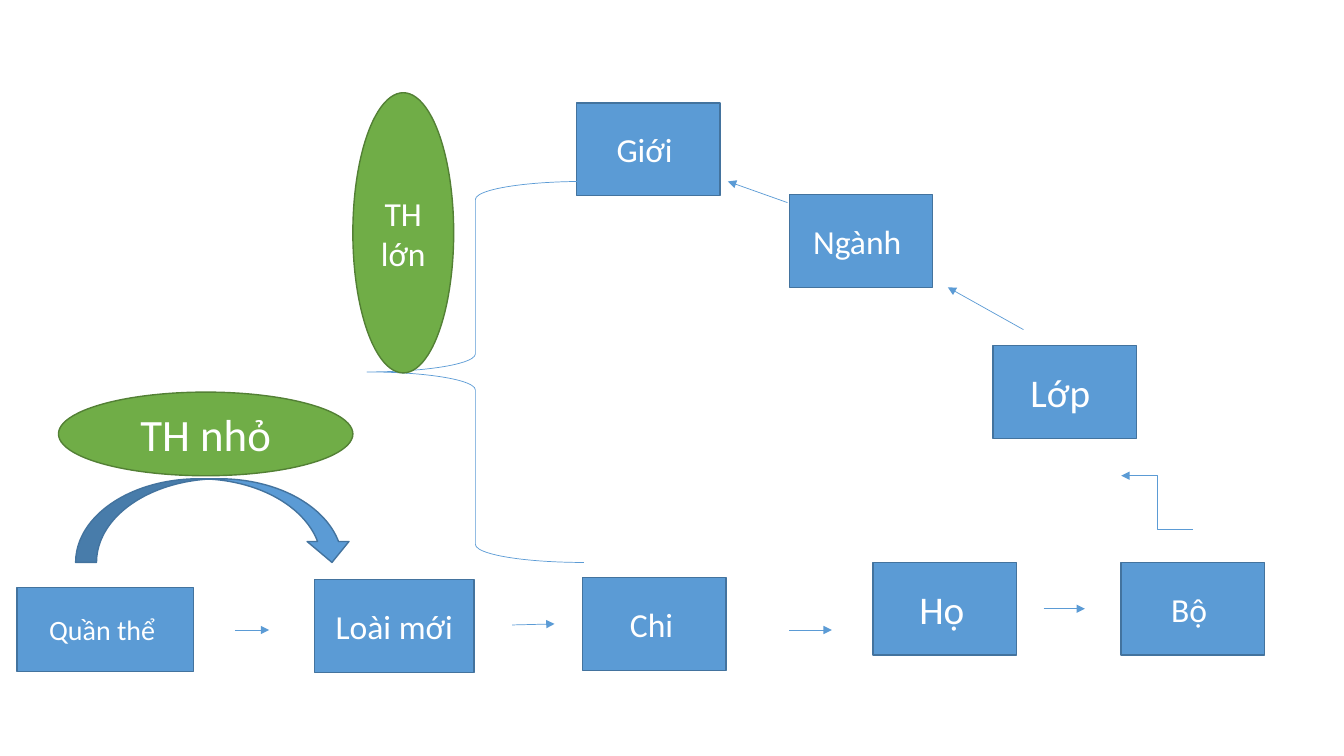
import pptx
import pptx.dml.color
import pptx.enum.shapes
import pptx.enum.text
import pptx.oxml
import pptx.oxml.ns
import pptx.util
from dataclasses import dataclass

Inches = pptx.util.Inches
Pt = pptx.util.Pt
SHAPE = pptx.enum.shapes.MSO_SHAPE
LINK = pptx.enum.shapes.MSO_CONNECTOR


@dataclass
class Theme:
    font: str = "Calibri"
    white: str = "FFFFFF"
    blue: str = "5B9BD5"
    navy: str = "43739E"
    green: str = "70AD47"
    moss: str = "538035"
    tiny: int = 18
    small: int = 20
    base: int = 24
    large: int = 28
    huge: int = 32
    edge: float = 1
    thin: float = 0.5


def color(code):
    return pptx.dml.color.RGBColor.from_string(code)


class Chart:
    def __init__(self, slide, theme):
        self.slide = slide
        self.theme = theme

    def shape(self, kind, at, fill, line, width):
        item = self.slide.shapes.add_shape(kind, *map(Inches, at))
        item.shadow.inherit = False
        if fill:
            item.fill.solid()
            item.fill.fore_color.rgb = color(fill)
        else:
            item.fill.background()
        item.line.color.rgb = color(line)
        item.line.width = Pt(width)
        return item

    def label(self, item, text, size):
        """Centre the text; a space closing a "|" text is set in the tiny size."""
        frame = item.text_frame
        frame.word_wrap = True
        frame.vertical_anchor = pptx.enum.text.MSO_ANCHOR.MIDDLE
        para = frame.paragraphs[0]
        para.alignment = pptx.enum.text.PP_ALIGN.CENTER
        para.font.name = self.theme.font
        para.font.color.rgb = color(self.theme.white)
        para.font.size = Pt(size)
        for part, points in zip(text.split("|"), (size, self.theme.tiny)):
            run = para.add_run()
            run.text = part
            if points != size:
                run.font.size = Pt(points)

    def box(self, text, size, left, top, width=1.42, height=0.92):
        look = self.theme
        item = self.shape(SHAPE.RECTANGLE, (left, top, width, height),
                          look.blue, look.navy, look.edge)
        self.label(item, text, size)

    def oval(self, text, size, *at):
        look = self.theme
        item = self.shape(SHAPE.OVAL, at, look.green, look.moss, look.edge)
        self.label(item, text, size)

    def curve(self, *at):
        look = self.theme
        self.shape(SHAPE.CURVED_DOWN_ARROW, at, look.blue, look.navy, look.edge)

    def brace(self, *at):
        look = self.theme
        self.shape(SHAPE.LEFT_BRACE, at, None, look.blue, look.thin)

    def arrow(self, *ends, kind=LINK.STRAIGHT):
        item = self.slide.shapes.add_connector(kind, *map(Inches, ends))
        item.line.color.rgb = color(self.theme.blue)
        item.line.width = Pt(self.theme.thin)
        space = pptx.oxml.ns.nsdecls("a")
        head = pptx.oxml.parse_xml(f'<a:tailEnd {space} type="triangle"/>')
        item.line._get_or_add_ln().append(head)
        item._element.spPr.append(pptx.oxml.parse_xml(f"<a:effectLst {space}/>"))


def main():
    deck = pptx.Presentation()
    deck.slide_width = Inches(13.33)
    deck.slide_height = Inches(7.5)
    look = Theme()
    chart = Chart(deck.slides.add_slide(deck.slide_layouts[6]), look)

    chart.box("Quần thể ", look.small, 0.17, 5.83, 1.75, 0.83)
    chart.box("Loài mới", look.base, 3.12, 5.75, 1.58)
    for text, size, left, top in (
        ("Chi| ", look.base, 5.78, 5.73),
        ("Họ| ", look.large, 8.66, 5.58),
        ("Bộ ", look.base, 11.12, 5.58),
        ("Ngành ", look.base, 7.83, 1.93),
        ("Lớp ", look.large, 9.85, 3.43),
        ("Giới ", look.base, 5.72, 1.02),
    ):
        chart.box(text, size, left, top)

    for ends in (
        (2.33, 6.25, 2.67, 6.25),
        (5.08, 6.2, 5.5, 6.19),
        (7.83, 6.25, 8.25, 6.25),
        (10.35, 6.04, 10.76, 6.04),
        (10.15, 3.27, 9.4, 2.85),
        (7.81, 2.01, 7.22, 1.8),
    ):
        chart.arrow(*ends)
    chart.arrow(11.83, 5.25, 11.12, 4.72, kind=LINK.ELBOW)

    chart.curve(0.75, 4.75, 2.75, 0.83)
    chart.oval("TH nhỏ", look.huge, 0.58, 3.89, 2.92, 0.83)
    chart.brace(3.64, 1.8, 2.15, 3.78)
    chart.oval("TH lớn", look.base, 3.5, 0.92, 1, 2.78)
    deck.save("out.pptx")


if __name__ == "__main__":
    main()
